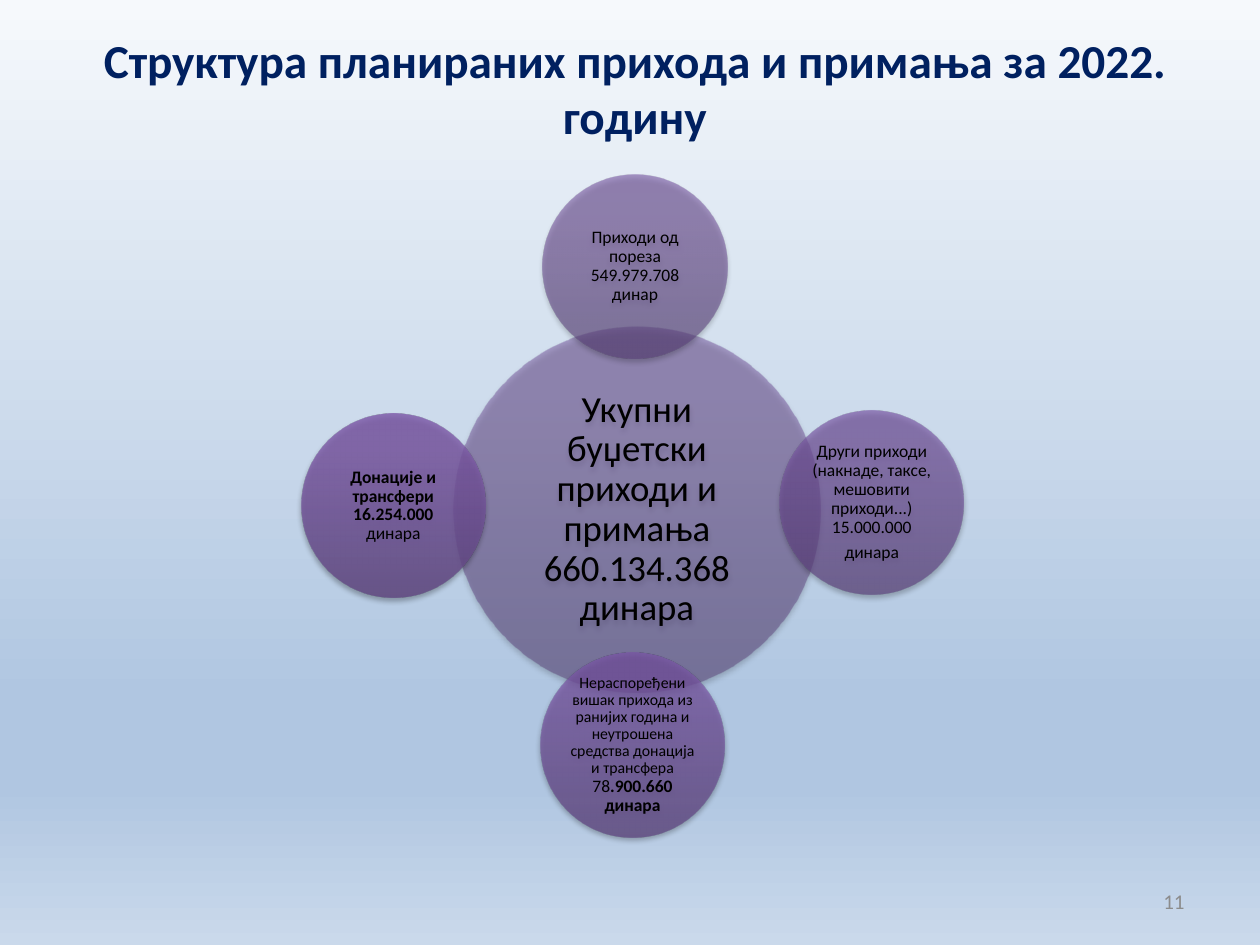
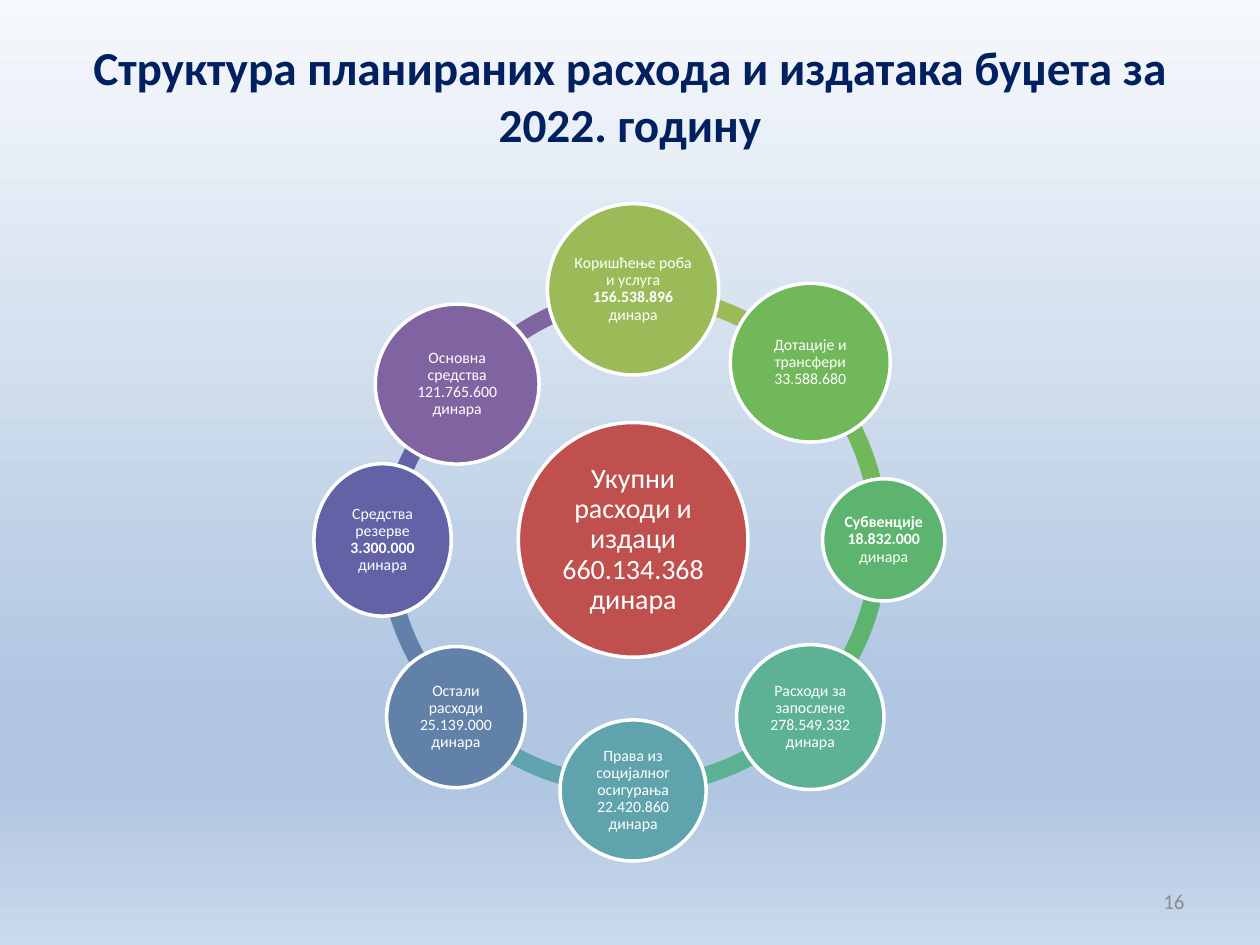
from dataclasses import dataclass
from math import cos, radians, sin

from lxml.etree import SubElement
from pptx import Presentation
from pptx.dml.color import RGBColor
from pptx.enum.shapes import MSO_SHAPE
from pptx.enum.text import MSO_ANCHOR, MSO_AUTO_SIZE, PP_ALIGN
from pptx.oxml.ns import qn
from pptx.util import Inches, Pt

COLUMNS, ROWS = 100, 75
WIDTH, HEIGHT = Inches(10), Inches(7.5)


@dataclass(frozen=True)
class Theme:
    """Colours, font and type sizes shared by the slides."""
    font: str = "Calibri"
    title: str = "002060"
    number: str = "8C8C8C"
    dark: str = "000000"
    light: str = "FFFFFF"
    expense_hub: str = "C0504D"
    backdrop: tuple = ((0, "F6F9FC"), (74, "B0C6E1"), (83, "B0C6E1"), (100, "CAD9EB"))
    title_size: int = 27
    number_size: int = 12
    income_hub_size: int = 21
    expense_hub_size: int = 16
    label_size: int = 10
    small_size: int = 9


@dataclass(frozen=True)
class Box:
    """A rectangle measured in grid columns and rows."""
    left: float
    top: float
    width: float
    height: float

    def place(self):
        """Return left, top, width and height as slide lengths."""
        return (round(self.left * WIDTH / COLUMNS), round(self.top * HEIGHT / ROWS),
                round(self.width * WIDTH / COLUMNS), round(self.height * HEIGHT / ROWS))

    def centred(self, width, height, shift=(0, 0)):
        """Return a box of the given size about this box's centre."""
        return Box(self.left + (self.width - width) / 2 + shift[0],
                   self.top + (self.height - height) / 2 + shift[1], width, height)


@dataclass(frozen=True)
class Span:
    """A piece of a paragraph with its own weight or size."""
    text: str
    bold: bool = False
    size: int = 0


@dataclass(frozen=True)
class Income:
    """An outer disc of the income diagram."""
    paragraphs: tuple
    stops: tuple
    opacity: int
    shift: tuple = (0, 0)


@dataclass(frozen=True)
class Expense:
    """An outer disc of the expense ring and the arc that follows it."""
    spans: tuple
    color: str
    size: tuple
    shift: tuple = (0, 0)
    sweep: tuple = ()
    arc_shift: tuple = (0, 0)


THEME = Theme()
TITLE_BOX = Box(5, 2.9, 90, 9.3)
NUMBER_BOX = Box(71.7, 69.5, 23.3, 4)
INCOME_BOX = Box(23.9, 13.85, 52.6, 52.6)
EXPENSE_BOX = Box(30, 22.6, 40.5, 40.5)

INCOME_HUB = Income(
    ((Span("Укупни буџетски приходи и примања 660.134.368 динара"),),),
    ("563D74", "705097", "704F99"), 50, (0.35, 0.3))
INCOMES = (
    Income(((Span("Приходи од пореза 549.979.708 динар"),),),
           ("583F77", "73519B", "73509D"), 57, (0.2, 0)),
    Income(((Span("Други приходи (накнаде, таксе, мешовити приходи...) 15.000.000"),),
            (Span("динара"),)),
           ("5B407B", "7653A0", "7652A2"), 65, (0, -0.25)),
    Income(((Span("Нераспоређени вишак прихода из ранијих година и неутрошена "
                  "средства донација и трансфера ", size=THEME.small_size),
             Span("78"), Span(".900.660 динара", True)),),
           ("5D427E", "7956A4", "7954A6"), 72),
    Income(((Span("Донације и трансфери 16.254.000 ", True), Span("динара")),),
           ("5F4580", "7C59A6", "7C58A8"), 80),
)
EXPENSES = (
    Expense((Span("Коришћење роба и услуга "), Span("156.538.896 ", True), Span("динара")),
            "9BBB59", (13.6, 13.6)),
    Expense((Span("Дотације и трансфери 33.588.680"),), "70B85A", (12.7, 12.6)),
    Expense((Span("Субвенције 18.832.000 ", True), Span("динара")), "5CB46F", (9.7, 9.7)),
    Expense((Span("Расходи за запослене 278.549.332 динара"),), "5DB195", (11.7, 11.5)),
    Expense((Span("Права из социјалног осигурања 22.420.860 динара"),),
            "5FA4AD", (11.6, 11.2)),
    Expense((Span("Остали расходи 25.139.000 динара"),), "6181A9", (11, 11.2)),
    Expense((Span("Средства резерве "), Span("3.300.000 ", True), Span("динара")),
            "6362A6", (10.9, 12.1), sweep=(185.81, 225.94), arc_shift=(-0.1, 2)),
    Expense((Span("Основна средства 121.765.600 динара"),),
            "8064A2", (13, 12.7), (0.1, 1.7), (217.83, 264.88), (1.8, -0.1)),
)


def write(para, text, *, size, color, bold=False, align=PP_ALIGN.CENTER):
    """Add formatted text to a paragraph."""
    para.alignment = align
    span = para.add_run()
    span.text = text
    span.font.name = THEME.font
    span.font.size = Pt(size)
    span.font.bold = bold
    span.font.color.rgb = RGBColor.from_string(color)


def paint_gradient(fill, element, stops, angle, opacity=100):
    """Fill with a linear gradient of (percent, colour) stops."""
    fill.gradient()
    gradient = element.find(".//" + qn("a:gradFill"))
    stop_list = gradient.find(qn("a:gsLst"))
    for stop in list(stop_list):
        stop_list.remove(stop)
    for percent, color in stops:
        stop = SubElement(stop_list, qn("a:gs"), pos=str(percent * 1000))
        paint = SubElement(stop, qn("a:srgbClr"), val=color)
        SubElement(paint, qn("a:alpha"), val=str(opacity * 1000))
    gradient.find(qn("a:lin")).set("ang", str(angle * 60000))


def add_shadow(shape):
    """Give a shape a soft shadow below it."""
    effects = shape._element.spPr.find(qn("a:effectLst"))
    shadow = SubElement(effects, qn("a:outerShdw"), blurRad=str(Pt(3.1)), dist=str(Pt(1.8)),
                        dir="5400000", rotWithShape="0")
    paint = SubElement(shadow, qn("a:srgbClr"), val=THEME.dark)
    SubElement(paint, qn("a:alpha"), val="35000")


def add_figure(page, kind, box, color=None):
    """Add a flat preset shape without an outline."""
    shape = page.shapes.add_shape(kind, *box.place())
    shape.shadow.inherit = False
    shape.line.fill.background()
    if color:
        shape.fill.solid()
        shape.fill.fore_color.rgb = RGBColor.from_string(color)
    return shape


def label_disc(disc, paragraphs, size, color):
    """Write centred paragraphs inside a disc."""
    frame = disc.text_frame
    frame.word_wrap = True
    frame.vertical_anchor = MSO_ANCHOR.MIDDLE
    frame.margin_left = frame.margin_right = Inches(0.01)
    frame.margin_top = frame.margin_bottom = Inches(0.01)
    for index, spans in enumerate(paragraphs):
        para = frame.add_paragraph() if index else frame.paragraphs[0]
        para.line_spacing = 0.9
        para.space_after = Pt(size * 0.35)
        for span in spans:
            write(para, span.text, size=span.size or size, color=color, bold=span.bold)


def add_income_disc(page, box, income, size):
    """Add a translucent shaded disc with its label."""
    disc = add_figure(page, MSO_SHAPE.OVAL, box)
    paint_gradient(disc.fill, disc._element.spPr, zip((0, 80, 100), income.stops),
                   270, income.opacity)
    add_shadow(disc)
    label_disc(disc, income.paragraphs, size, THEME.dark)


def add_expense_disc(page, box, color, spans, size):
    """Add a white-rimmed disc with its label."""
    disc = add_figure(page, MSO_SHAPE.OVAL, box, color)
    disc.line.color.rgb = RGBColor.from_string(THEME.light)
    disc.line.width = Pt(2)
    label_disc(disc, (spans,), size, THEME.light)


def orbit(index, count, radius, shift):
    """Return the offset of one of several equal steps clockwise from the top."""
    angle = radians(360 * index / count - 90)
    return radius * cos(angle) + shift[0], radius * sin(angle) + shift[1]


def draw_incomes(page, box):
    """Draw the income hub and its overlapping outer discs."""
    hub, small, radius = box.width * 0.553, box.width * 0.278, box.width * 0.361
    add_income_disc(page, box.centred(hub, hub, INCOME_HUB.shift), INCOME_HUB,
                    THEME.income_hub_size)
    for index, income in enumerate(INCOMES):
        shift = orbit(index, len(INCOMES), radius, income.shift)
        add_income_disc(page, box.centred(small, small, shift), income, THEME.label_size)


def draw_expenses(page, box):
    """Draw the ring of arcs, the expense hub and the outer discs."""
    count = len(EXPENSES)
    step = 360 / count
    for index, expense in reversed(list(enumerate(EXPENSES))):
        start = 270 + index * step
        sweep = expense.sweep or (start % 360, (start + step) % 360)
        arc = add_figure(page, MSO_SHAPE.BLOCK_ARC,
                         box.centred(box.width, box.height, expense.arc_shift), expense.color)
        for position, angle in enumerate(sweep):
            arc.adjustments[position] = angle * 0.6
        arc.adjustments[2] = 0.034
    hub = (Span("Укупни расходи и издаци 660.134.368 динара"),)
    add_expense_disc(page, box.centred(box.width * 0.45, box.height * 0.46),
                     THEME.expense_hub, hub, THEME.expense_hub_size)
    for index, expense in enumerate(EXPENSES):
        shift = orbit(index, count, box.width * 0.491, expense.shift)
        add_expense_disc(page, box.centred(*expense.size, shift), expense.color,
                         expense.spans, THEME.small_size)


def add_page(deck, title, number, title_box=TITLE_BOX):
    """Add a slide with its title and slide number."""
    page = deck.slides.add_slide(deck.slide_layouts[5])
    heading = page.shapes.title
    heading.left, heading.top, heading.width, heading.height = title_box.place()
    heading.text_frame.auto_size = MSO_AUTO_SIZE.NONE
    heading.text_frame.vertical_anchor = MSO_ANCHOR.MIDDLE
    write(heading.text_frame.paragraphs[0], title, size=THEME.title_size,
          color=THEME.title, bold=True)
    frame = page.shapes.add_textbox(*NUMBER_BOX.place()).text_frame
    frame.word_wrap = True
    frame.vertical_anchor = MSO_ANCHOR.MIDDLE
    write(frame.paragraphs[0], str(number), size=THEME.number_size,
          color=THEME.number, align=PP_ALIGN.RIGHT)
    return page


def main():
    """Build and save the deck."""
    deck = Presentation()
    deck.slide_width, deck.slide_height = WIDTH, HEIGHT
    master = deck.slide_master
    paint_gradient(master.background.fill, master.element, THEME.backdrop, 90)
    page = add_page(deck, "Структура планираних прихода и примања за 2022. годину", 11,
                    Box(5.4, 2.7, 90, 8.5))
    draw_incomes(page, INCOME_BOX)
    page = add_page(deck, "Структура планираних расхода и издатака буџета за 2022. годину", 16)
    draw_expenses(page, EXPENSE_BOX)
    deck.save("out.pptx")


if __name__ == "__main__":
    main()
